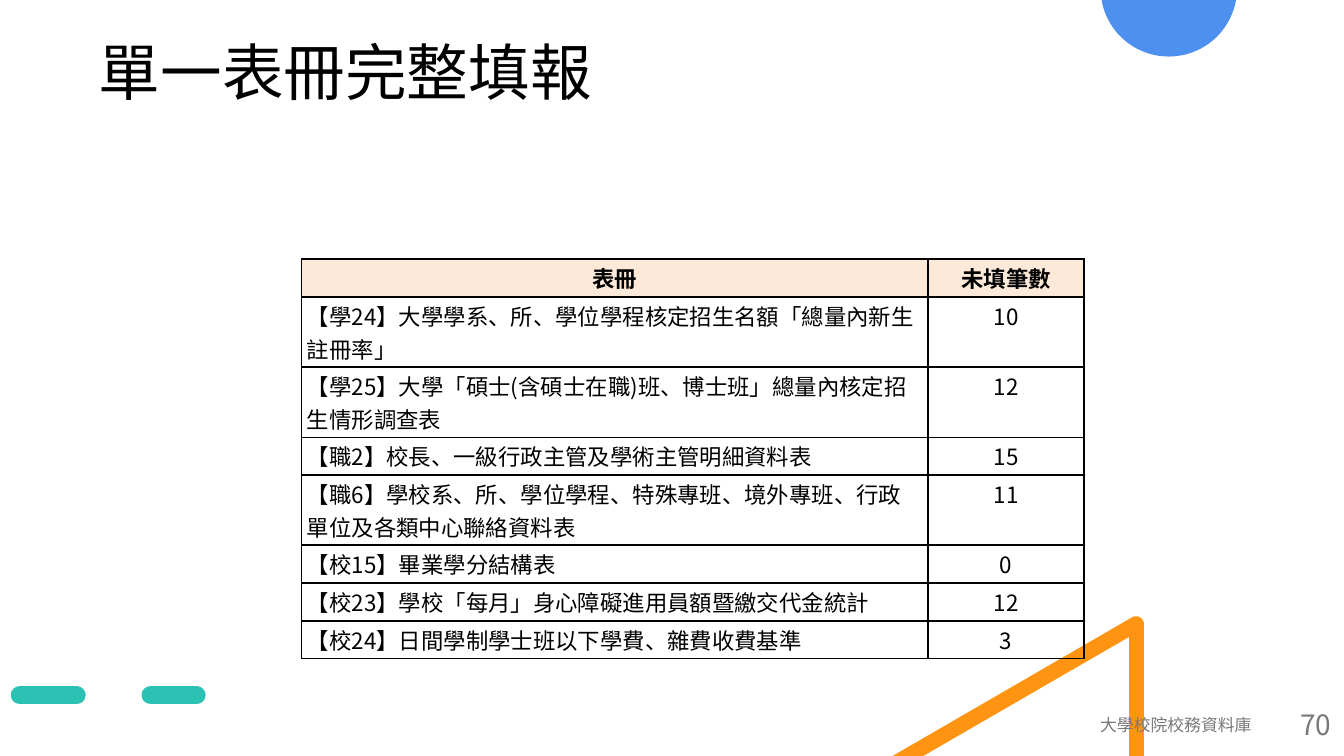
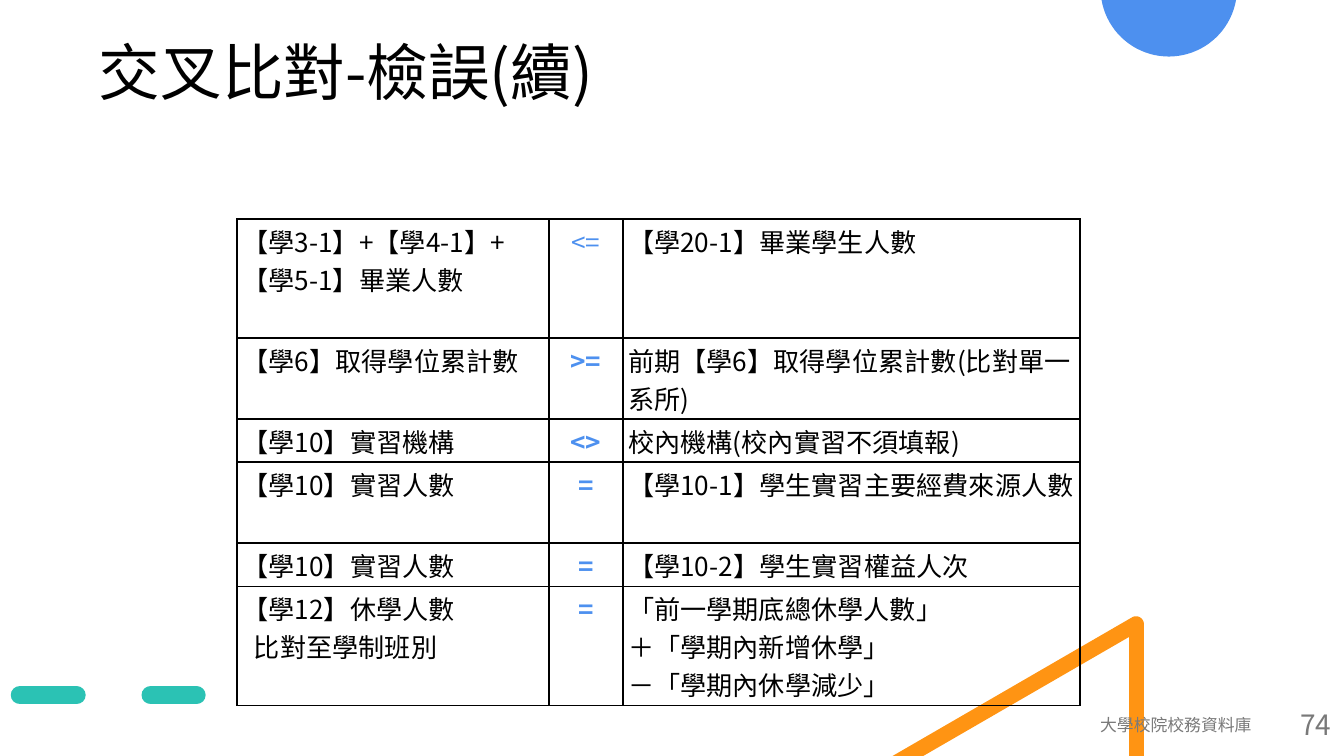
import math

from lxml import etree
from pptx import Presentation
from pptx.dml.color import RGBColor
from pptx.enum.dml import MSO_LINE
from pptx.enum.shapes import MSO_CONNECTOR
from pptx.enum.text import MSO_ANCHOR, PP_ALIGN
from pptx.oxml.ns import qn
from pptx.util import Cm, Pt

LEFT, MID, RIGHT = PP_ALIGN.LEFT, PP_ALIGN.CENTER, PP_ALIGN.RIGHT
TOP, MIDDLE = MSO_ANCHOR.TOP, MSO_ANCHOR.MIDDLE
STRAIGHT, DASH = MSO_CONNECTOR.STRAIGHT, MSO_LINE.DASH

FONT = "Noto Sans CJK TC"
BLACK, GREY, BLUE = "000000", "797979", "4D90EF"
ORANGE, TEAL, PEACH = "FF9413", "2BC2B4", "FDE9D8"
WIDE, HIGH = 25.4, 14.29
SIDE, EDGE = 0.1, 0.05  # cell margins
LEADING = 1.45  # line height over text size
FOOTER = "大學校院校務資料庫"

FORMS = [
    ("表冊", "未填筆數"),
    ("【學24】大學學系、所、學位學程核定招生名額「總量內新生註冊率」", "10"),
    ("【學25】大學「碩士(含碩士在職)班、博士班」總量內核定招生情形調查表", "12"),
    ("【職2】校長、一級行政主管及學術主管明細資料表", "15"),
    ("【職6】學校系、所、學位學程、特殊專班、境外專班、行政單位及各類中心聯絡資料表", "11"),
    ("【校15】畢業學分結構表", "0"),
    ("【校23】學校「每月」身心障礙進用員額暨繳交代金統計", "12"),
    ("【校24】日間學制學士班以下學費、雜費收費基準", "3"),
]
CHECKS = [
    ("【學3-1】+【學4-1】+【學5-1】畢業人數", "<=", "【學20-1】畢業學生人數"),
    ("【學6】取得學位累計數", ">=", "前期【學6】取得學位累計數(比對單一系所)"),
    ("【學10】實習機構", "<>", "校內機構(校內實習不須填報)"),
    ("【學10】實習人數", "=", "【學10-1】學生實習主要經費來源人數"),
    ("【學10】實習人數", "=", "【學10-2】學生實習權益人次"),
    ("【學12】休學人數\n比對至學制班別", "=",
     "「前一學期底總休學人數」\n＋「學期內新增休學」\n－「學期內休學減少」"),
]
SLIDES = [
    dict(title="單一表冊完整填報", page="70", data=FORMS, head=True, size=12,
         at=(5.7, 4.9), cols=(11.84, 2.95), lines=(1, 2, 2, 1, 2, 1, 1, 1)),
    dict(title="交叉比對-檢誤(續)", page="74", data=CHECKS, head=False, size=14,
         at=(4.48, 4.14), cols=(5.89, 1.4, 8.64), lines=(3, 2, 1, 2, 1, 3)),
]


def rgb(code):
    return RGBColor.from_string(code)


def write(para, text, size, color=BLACK, bold=False, align=LEFT):
    para.alignment = align
    run = para.add_run()
    run.text = text
    font = run.font
    font.name, font.size, font.bold = FONT, Pt(size), bold
    font.color.rgb = rgb(color)
    east = etree.SubElement(font._element, qn("a:ea"))
    east.set("typeface", FONT)


def pad(obj, side, edge):
    obj.margin_left = obj.margin_right = Cm(side)
    obj.margin_top = obj.margin_bottom = Cm(edge)


def label(slide, box, text, size, color, align=LEFT, anchor=TOP, gaps=(0.13, 0.05)):
    frame = slide.shapes.add_textbox(*map(Cm, box)).text_frame
    frame.word_wrap = True
    frame.vertical_anchor = anchor
    pad(frame, *gaps)
    write(frame.paragraphs[0], text, size, color, align=align)
    return frame.paragraphs[0]


def arc(x, y, r, start, end, steps=40):
    turns = [math.radians(start + (end - start) * i / steps) for i in range(steps + 1)]
    return [(x + r * math.cos(t), y + r * math.sin(t)) for t in turns]


def outline(slide, points, color):
    spots = [(Cm(x), Cm(y)) for x, y in points]
    build = slide.shapes.build_freeform(*spots[0])
    build.add_line_segments(spots[1:], close=True)
    shape = build.convert_to_shape()
    shape.shadow.inherit = False
    shape.fill.solid()
    shape.fill.fore_color.rgb = rgb(color)
    shape.line.fill.background()


def decor(slide):
    """Draw the blue disc, the orange corner and the teal dashes."""
    tilt = math.degrees(math.asin(0.22 / 1.29))
    outline(slide, arc(22.09, -0.22, 1.29, tilt, 180 - tilt), BLUE)
    legs = [(21.62, HIGH), (21.34, HIGH), (21.34, 12.04), (17.45, HIGH), (16.87, HIGH)]
    outline(slide, legs + arc(21.47, 11.8, 0.15, -120, 0), ORANGE)
    y = Cm(13.14)
    link = slide.shapes.add_connector(STRAIGHT, Cm(0.38), y, Cm(3.71), y)
    link.line.color.rgb = rgb(TEAL)
    link.line.width = Pt(10)
    link.line.dash_style = DASH
    link.line._ln.set("cap", "rnd")
    etree.SubElement(link._element.spPr, qn("a:effectLst"))


def border(cell):
    props = cell._tc.get_or_add_tcPr()
    for side in ("lnL", "lnR", "lnT", "lnB"):
        edge = etree.SubElement(props, qn("a:" + side), w=str(Pt(1)))
        fill = etree.SubElement(edge, qn("a:solidFill"))
        etree.SubElement(fill, qn("a:srgbClr"), val=BLACK)


def grid(slide, item):
    data, cols, size = item["data"], item["cols"], item["size"]
    rows = [n * Pt(size).cm * LEADING + 2 * EDGE for n in item["lines"]]
    box = (*item["at"], sum(cols), sum(rows))
    table = slide.shapes.add_table(len(rows), len(cols), *map(Cm, box)).table
    table.first_row = table.horz_banding = False
    for col, wide in zip(table.columns, cols):
        col.width = Cm(wide)
    for row, high in zip(table.rows, rows):
        row.height = Cm(high)
    for r, texts in enumerate(data):
        for c, text in enumerate(texts):
            cell = table.cell(r, c)
            head = item["head"] and r == 0
            sign = c == 1 and not item["head"]
            border(cell)
            pad(cell, SIDE, EDGE)
            if head:
                cell.fill.solid()
                cell.fill.fore_color.rgb = rgb(PEACH)
            else:
                cell.fill.background()
            frame = cell.text_frame
            for n, part in enumerate(text.split("\n")):
                para = frame.add_paragraph() if n else frame.paragraphs[0]
                write(para, part, size, BLUE if sign else BLACK,
                      head or (sign and text != "<="),
                      MID if head or c == 1 else LEFT)
                if n and c == 0:
                    para._p.get_or_add_pPr().set("marL", str(Cm(0.22)))


def main():
    deck = Presentation()
    deck.slide_width, deck.slide_height = Cm(WIDE), Cm(HIGH)
    for item in SLIDES:
        slide = deck.slides.add_slide(deck.slide_layouts[6])
        decor(slide)
        title = label(slide, (1.74, 0.75, 21.9, 2.77), item["title"], 33, BLACK)
        title.line_spacing = 0.9
        grid(slide, item)
        for left, wide, text, size in ((13.08, 10.8, FOOTER, 9),
                                       (24.12, 1.27, item["page"], 15)):
            label(slide, (left, 13.32, wide, 0.76), text, size, GREY,
                  RIGHT, MIDDLE, (0.23, 0.1))
    deck.save("out.pptx")


if __name__ == "__main__":
    main()
